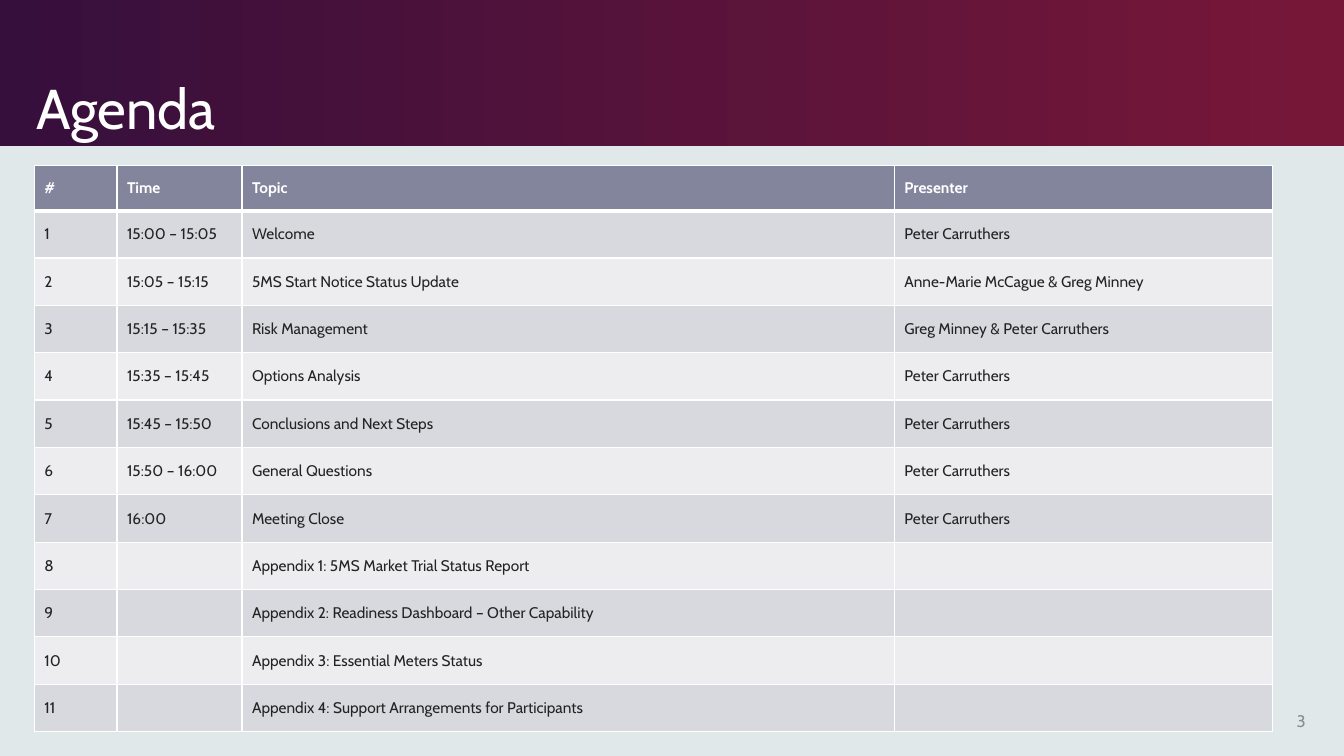
import dataclasses
import typing

import lxml.etree
import pptx
import pptx.dml.color
import pptx.enum.shapes
import pptx.enum.text
import pptx.oxml.ns
import pptx.util

Inches = pptx.util.Inches
Anchor = pptx.enum.text.MSO_ANCHOR
Align = pptx.enum.text.PP_ALIGN


@dataclasses.dataclass(frozen=True)
class Theme:
    font: str = "Cabin"
    page: str = "E0E8EA"
    banner_start: str = "360F3C"
    banner_end: str = "771738"
    white: str = "FFFFFF"
    ink: str = "222324"
    page_number: str = "8D8D8E"
    header_fill: str = "82859C"
    bands: tuple[str, str] = ("D8D9DE", "EDEDEF")
    title_size: float = 40
    number_size: float = 12
    table_size: float = 11
    thin_border: float = 1
    header_border: float = 3


@dataclasses.dataclass(frozen=True)
class Label:
    text: str
    left: float
    top: float
    width: float
    height: float
    size: float
    color: str
    anchor: Anchor
    align: Align
    line_spacing: float = 1.0


class AgendaItem(typing.NamedTuple):
    time: str
    topic: str
    presenter: str


THEME = Theme()
LABELS = (
    Label("Agenda", 0.26, 0.15, 9.84, 1.3, THEME.title_size, THEME.white,
          Anchor.BOTTOM, Align.LEFT, 0.9),
    Label("3", 12.42, 6.95, 0.63, 0.4, THEME.number_size, THEME.page_number,
          Anchor.MIDDLE, Align.RIGHT),
)
HEADINGS = ("#", "Time", "Topic", "Presenter")
COLUMN_WIDTHS = (0.82, 1.24, 6.47, 3.75)
HEADER_HEIGHT, ITEM_HEIGHT = 0.45, 0.47
AGENDA = (
    AgendaItem("15:00 – 15:05", "Welcome", "Peter Carruthers"),
    AgendaItem("15:05 – 15:15", "5MS Start Notice Status Update", "Anne-Marie McCague & Greg Minney"),
    AgendaItem("15:15 – 15:35", "Risk Management", "Greg Minney & Peter Carruthers"),
    AgendaItem("15:35 – 15:45", "Options Analysis", "Peter Carruthers"),
    AgendaItem("15:45 – 15:50", "Conclusions and Next Steps", "Peter Carruthers"),
    AgendaItem("15:50 – 16:00", "General Questions", "Peter Carruthers"),
    AgendaItem("16:00", "Meeting Close", "Peter Carruthers"),
    AgendaItem("", "Appendix 1: 5MS Market Trial Status Report", ""),
    AgendaItem("", "Appendix 2: Readiness Dashboard – Other Capability", ""),
    AgendaItem("", "Appendix 3: Essential Meters Status", ""),
    AgendaItem("", "Appendix 4: Support Arrangements for Participants", ""),
)


def rgb(color: str) -> pptx.dml.color.RGBColor:
    return pptx.dml.color.RGBColor.from_string(color)


def add_span(para, text: str, size: float, color: str, bold: bool = False) -> None:
    span = para.add_run()
    span.text = text
    span.font.name = THEME.font
    span.font.size = pptx.util.Pt(size)
    span.font.bold = bold
    span.font.color.rgb = rgb(color)


def add_banner(page) -> None:
    banner = page.shapes.add_shape(
        pptx.enum.shapes.MSO_SHAPE.RECTANGLE, 0, 0, Inches(13.33), Inches(1.45))
    banner.shadow.inherit = False
    banner.line.fill.background()
    banner.fill.gradient()
    banner.fill.gradient_angle = 0
    stops = ((0, THEME.banner_start), (0.99, THEME.banner_end))
    for stop, (position, color) in zip(banner.fill.gradient_stops, stops):
        stop.position = position
        stop.color.rgb = rgb(color)


def add_label(page, label: Label) -> None:
    box = page.shapes.add_textbox(Inches(label.left), Inches(label.top),
                                  Inches(label.width), Inches(label.height))
    frame = box.text_frame
    frame.word_wrap = True
    frame.vertical_anchor = label.anchor
    para = frame.paragraphs[0]
    para.alignment = label.align
    para.line_spacing = label.line_spacing
    add_span(para, label.text, label.size, label.color)


def add_borders(cell, top: float, bottom: float) -> None:
    properties = cell._tc.get_or_add_tcPr()
    thin = THEME.thin_border
    for side, width in (("L", thin), ("R", thin), ("T", top), ("B", bottom)):
        line = lxml.etree.SubElement(properties, pptx.oxml.ns.qn(f"a:ln{side}"),
                                     w=str(pptx.util.Pt(width)))
        fill = lxml.etree.SubElement(line, pptx.oxml.ns.qn("a:solidFill"))
        lxml.etree.SubElement(fill, pptx.oxml.ns.qn("a:srgbClr"), val=THEME.white)


def fill_cell(cell, text: str, row: int) -> None:
    is_header = row == 0
    add_borders(cell,
                top=THEME.header_border if row == 1 else THEME.thin_border,
                bottom=THEME.header_border if is_header else THEME.thin_border)
    cell.fill.solid()
    cell.fill.fore_color.rgb = rgb(THEME.header_fill if is_header else THEME.bands[(row - 1) % 2])
    cell.vertical_anchor = Anchor.MIDDLE
    if is_header:
        cell.margin_top = cell.margin_bottom = 0
    if text:
        add_span(cell.text_frame.paragraphs[0], text, THEME.table_size,
                 THEME.white if is_header else THEME.ink, bold=is_header)


def add_agenda(page) -> None:
    rows = [HEADINGS] + [(str(number), *item) for number, item in enumerate(AGENDA, 1)]
    height = HEADER_HEIGHT + ITEM_HEIGHT * len(AGENDA)
    table = page.shapes.add_table(
        len(rows), len(HEADINGS), Inches(0.34), Inches(1.64),
        Inches(sum(COLUMN_WIDTHS)), Inches(height)).table
    for column, width in zip(table.columns, COLUMN_WIDTHS):
        column.width = Inches(width)
    for row, texts in enumerate(rows):
        table.rows[row].height = Inches(ITEM_HEIGHT if row else HEADER_HEIGHT)
        for column, text in enumerate(texts):
            fill_cell(table.cell(row, column), text, row)


def main() -> None:
    deck = pptx.Presentation()
    deck.slide_width, deck.slide_height = Inches(13.33), Inches(7.5)
    page = deck.slides.add_slide(deck.slide_layouts[6])
    page.background.fill.solid()
    page.background.fill.fore_color.rgb = rgb(THEME.page)

    # Banner, title and page number
    add_banner(page)
    for label in LABELS:
        add_label(page, label)

    # Agenda table
    add_agenda(page)
    deck.save("out.pptx")


if __name__ == "__main__":
    main()
